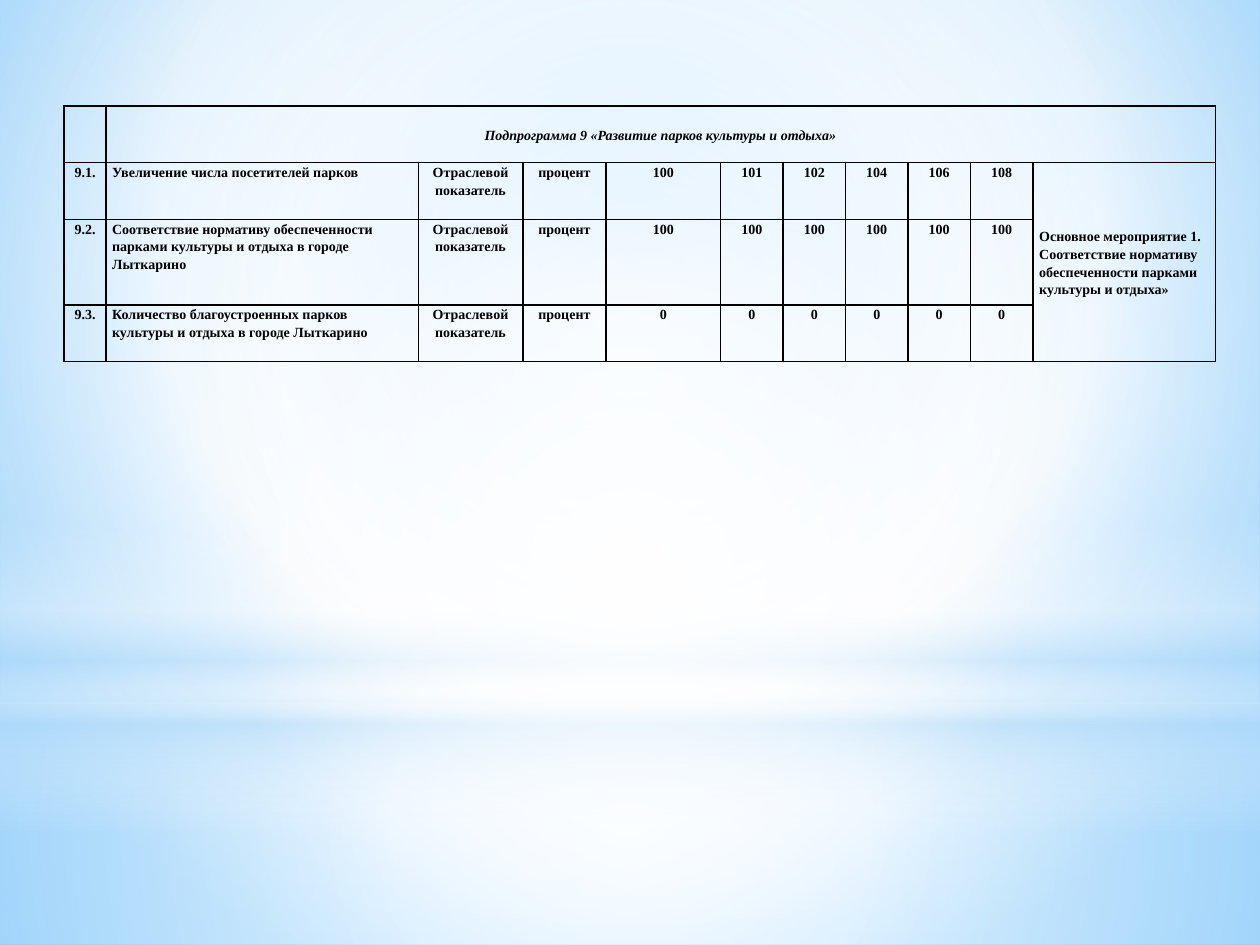
from dataclasses import dataclass

from lxml import etree
from pptx import Presentation
from pptx.dml.color import RGBColor
from pptx.enum.shapes import MSO_SHAPE
from pptx.enum.text import MSO_ANCHOR, PP_ALIGN
from pptx.oxml.ns import qn
from pptx.util import Inches, Pt

RECTANGLE, OVAL = MSO_SHAPE.RECTANGLE, MSO_SHAPE.OVAL
LEFT, CENTER = PP_ALIGN.LEFT, PP_ALIGN.CENTER
TOP, MIDDLE = MSO_ANCHOR.TOP, MSO_ANCHOR.MIDDLE


@dataclass(frozen=True)
class Theme:
    font: str = "Times New Roman"
    text_size: float = 8
    line_spacing: float = 1.15
    border_width: float = 1
    ink: str = "000000"
    white: str = "FFFFFF"
    haze: str = "B4DCFA"
    sky: str = "9ED5FF"
    deep_sky: str = "5BB9FF"


THEME = Theme()


@dataclass(frozen=True)
class Stop:
    position: int
    color: str
    opacity: int = 100


@dataclass(frozen=True)
class Gradient:
    """Circular around the focus (left, top, right, bottom), or vertical without one."""
    stops: tuple[Stop, ...]
    focus: tuple[int, int, int, int] | None = (50, 50, 50, 50)


@dataclass(frozen=True)
class Glow:
    outline: MSO_SHAPE
    top: float
    height: float
    gradient: Gradient


@dataclass(frozen=True)
class Indicator:
    number: str
    title: str
    values: tuple[int, ...]


SKY = Gradient((Stop(0, THEME.sky), Stop(60, THEME.white), Stop(100, THEME.deep_sky)),
               (20, 10, 20, 60))
GLOWS = (
    Glow(RECTANGLE, 5.58, 1.92, Gradient((
        Stop(0, THEME.white, 91), Stop(37, THEME.white, 76), Stop(100, THEME.haze, 79)))),
    Glow(RECTANGLE, 0, 5.58, Gradient((
        Stop(0, THEME.white, 89), Stop(48, THEME.white, 62), Stop(100, THEME.haze, 79)))),
    Glow(RECTANGLE, 4.12, 2.5, Gradient((
        Stop(0, THEME.white, 0), Stop(29, THEME.white, 30), Stop(45, THEME.haze, 40),
        Stop(55, THEME.white, 26), Stop(65, THEME.haze, 60), Stop(100, THEME.white, 0)), None)),
    Glow(OVAL, 1.75, 5.58, Gradient((Stop(0, THEME.white), Stop(56, THEME.white, 0)))),
)

SUBPROGRAM = "Подпрограмма 9 «Развитие парков культуры и отдыха»"
INDICATOR_KIND = "Отраслевой показатель"
UNIT = "процент"
ACTIVITY = (
    "Основное мероприятие 1.",
    "Соответствие нормативу обеспеченности парками культуры и отдыха»",
)
INDICATORS = (
    Indicator("9.1.", "Увеличение числа посетителей парков", (100, 101, 102, 104, 106, 108)),
    Indicator("9.2.", "Соответствие нормативу обеспеченности парками культуры и отдыха "
              "в городе Лыткарино", (100,) * 6),
    Indicator("9.3.", "Количество благоустроенных парков культуры и отдыха "
              "в городе Лыткарино", (0,) * 6),
)
YEARS_WIDTH = 2.48
COLUMN_WIDTHS = (0.33, 2.48, 0.83, 0.66, 0.91, *[YEARS_WIDTH / 5] * 5, 1.45)
ROW_HEIGHTS = (0.45, 0.45, 0.68, 0.45)


def set_gradient(fill, properties, gradient: Gradient) -> None:
    """Put a gradient with opacity in place of the fill held by properties."""
    fill.solid()
    solid = properties.find(qn("a:solidFill"))
    grad = etree.Element(qn("a:gradFill"), rotWithShape="1")
    stop_list = etree.SubElement(grad, qn("a:gsLst"))
    for stop in gradient.stops:
        mark = etree.SubElement(stop_list, qn("a:gs"), pos=str(stop.position * 1000))
        color = etree.SubElement(mark, qn("a:srgbClr"), val=stop.color)
        if stop.opacity < 100:
            etree.SubElement(color, qn("a:alpha"), val=str(stop.opacity * 1000))
    if gradient.focus:
        circle = etree.SubElement(grad, qn("a:path"), path="circle")
        sides = {side: str(share * 1000) for side, share in zip("ltrb", gradient.focus)}
        etree.SubElement(circle, qn("a:fillToRect"), **sides)
    else:
        etree.SubElement(grad, qn("a:lin"), ang=str(90 * 60000), scaled="0")
    properties.replace(solid, grad)


def draw_glow(slide, glow: Glow, width: int) -> None:
    shape = slide.shapes.add_shape(glow.outline, 0, Inches(glow.top), width, Inches(glow.height))
    shape.shadow.inherit = False
    shape.line.fill.background()
    set_gradient(shape.fill, shape.element.spPr, glow.gradient)


def style_cell(cell) -> None:
    """Clear the fill, set the margins and draw all four borders."""
    cell.fill.background()
    cell.margin_left = cell.margin_right = Inches(0.05)
    cell.margin_top = cell.margin_bottom = 0
    properties = cell._tc.tcPr
    for index, side in enumerate(("lnL", "lnR", "lnT", "lnB")):
        border = etree.Element(qn(f"a:{side}"), w=str(Pt(THEME.border_width)))
        fill = etree.SubElement(border, qn("a:solidFill"))
        etree.SubElement(fill, qn("a:srgbClr"), val=THEME.ink)
        properties.insert(index, border)


def write(cell, *texts: str, align: PP_ALIGN = CENTER, anchor: MSO_ANCHOR = TOP,
          italic: bool = False) -> None:
    cell.vertical_anchor = anchor
    frame = cell.text_frame
    for index, text in enumerate(texts):
        paragraph = frame.add_paragraph() if index else frame.paragraphs[0]
        paragraph.alignment = align
        paragraph.line_spacing = THEME.line_spacing
        run = paragraph.add_run()
        run.text = text
        run.font.name = THEME.font
        run.font.size = Pt(THEME.text_size)
        run.font.bold = True
        run.font.italic = italic
        run.font.color.rgb = RGBColor.from_string(THEME.ink)


def draw_indicator_table(slide) -> None:
    table = slide.shapes.add_table(
        len(ROW_HEIGHTS), len(COLUMN_WIDTHS), Inches(0.51), Inches(0.84),
        Inches(sum(COLUMN_WIDTHS)), Inches(sum(ROW_HEIGHTS))).table
    table.first_row = table.horz_banding = False
    for column, width in zip(table.columns, COLUMN_WIDTHS):
        column.width = Inches(width)
    for row, height in zip(table.rows, ROW_HEIGHTS):
        row.height = Inches(height)
    for cell in table.iter_cells():
        style_cell(cell)

    last_row, last_column = len(ROW_HEIGHTS) - 1, len(COLUMN_WIDTHS) - 1
    heading, activity = table.cell(0, 1), table.cell(1, last_column)
    heading.merge(table.cell(0, last_column))
    activity.merge(table.cell(last_row, last_column))
    write(heading, SUBPROGRAM, anchor=MIDDLE, italic=True)
    write(activity, *ACTIVITY, align=LEFT, anchor=MIDDLE)

    for row, indicator in enumerate(INDICATORS, start=1):
        write(table.cell(row, 0), indicator.number)
        write(table.cell(row, 1), indicator.title, align=LEFT)
        details = (INDICATOR_KIND, UNIT, *map(str, indicator.values))
        for column, detail in enumerate(details, start=2):
            write(table.cell(row, column), detail)


def main() -> None:
    deck = Presentation()
    deck.slide_width, deck.slide_height = Inches(10), Inches(7.5)
    slide = deck.slides.add_slide(deck.slide_layouts[6])
    background = slide.background.fill
    background.solid()
    set_gradient(background, slide.element.find(f".//{qn('p:bgPr')}"), SKY)
    for glow in GLOWS:
        draw_glow(slide, glow, deck.slide_width)
    draw_indicator_table(slide)
    deck.save("out.pptx")


if __name__ == "__main__":
    main()
